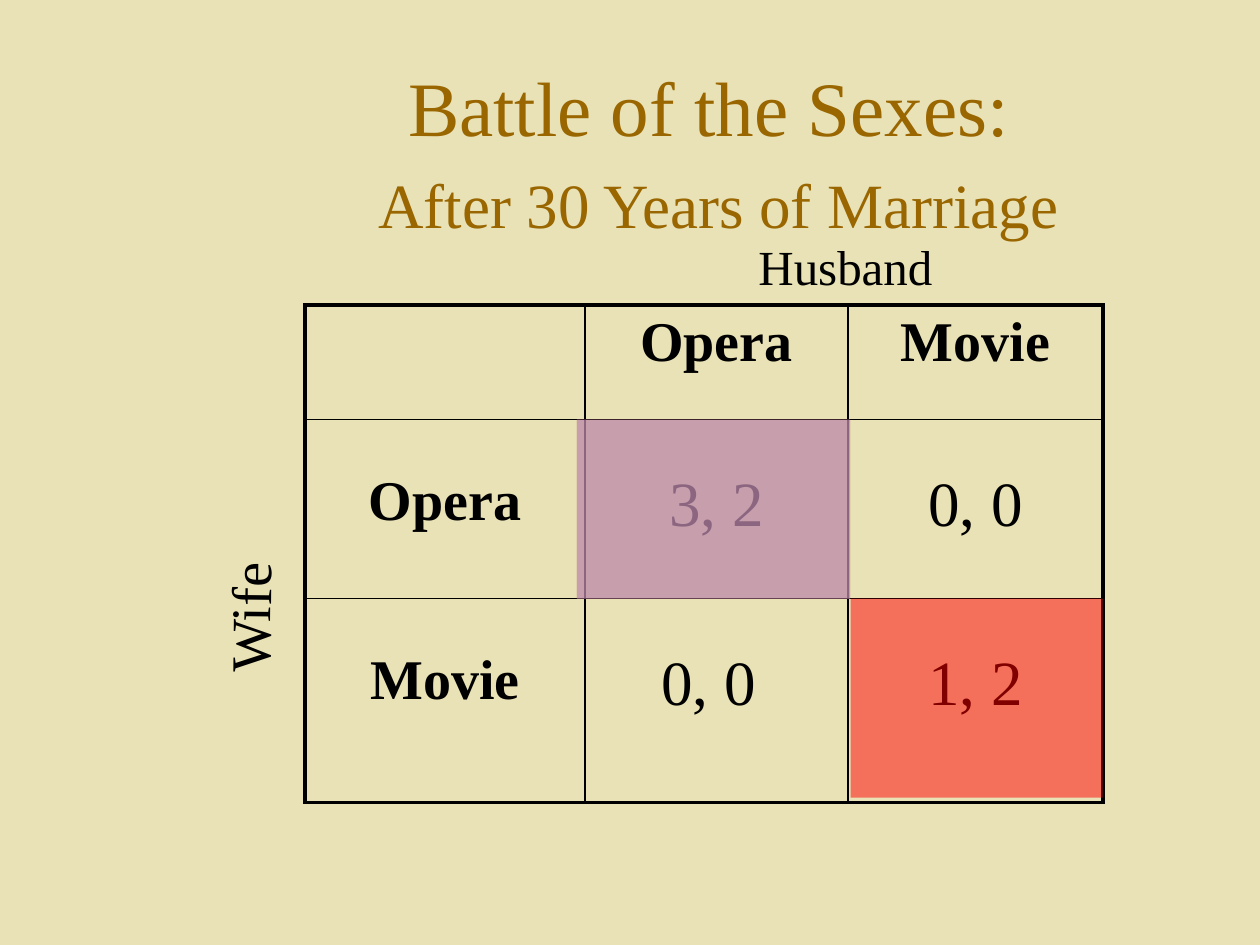
from dataclasses import dataclass

import pptx
import pptx.dml.color
import pptx.enum.shapes
import pptx.enum.text
import pptx.oxml
import pptx.oxml.ns
import pptx.util

Cm = pptx.util.Cm
Pt = pptx.util.Pt
CENTER = pptx.enum.text.PP_ALIGN.CENTER
LEFT = pptx.enum.text.PP_ALIGN.LEFT
MIDDLE = pptx.enum.text.MSO_ANCHOR.MIDDLE
TOP = pptx.enum.text.MSO_ANCHOR.TOP

FONT = "Times New Roman"
SAND, BROWN, BLACK = "E9E2B6", "996600", "000000"
RED, BLUE = "FF0000", "99CCFF"
DRAWING = pptx.oxml.ns.nsdecls("a")

HEADER = {"size": Pt(32), "bold": True}
PAYOFF = {"size": Pt(36), "bold": False}

COLUMN_WIDTHS = (5.64, 5.31, 5.14)
ROW_HEIGHTS = (2.31, 3.61, 4.11)
ROW_MARGINS = ((0.13, 0.13), (1.02, 1.02), (1.02, 0.13))
PAYOFFS = (
    ("", "Opera", "Movie"),
    ("Opera", "3, 2", "0, 0"),
    ("Movie", "0, 0 ", "1, 2"),
)


@dataclass
class Area:
    left: float
    top: float
    width: float
    height: float

    def lengths(self) -> tuple:
        return Cm(self.left), Cm(self.top), Cm(self.width), Cm(self.height)


@dataclass
class Label:
    area: Area
    lines: tuple
    color: str = BLACK
    align: int = LEFT
    anchor: int = TOP
    rotation: float = 0


@dataclass
class Highlight:
    area: Area
    color: str


OPERA_AREA = Area(11.63, 8.46, 5.51, 3.61)
MOVIE_AREA = Area(17.15, 12.07, 5.08, 4.01)

LABELS = (
    Label(Area(3.81, 1.47, 20.96, 3.18),
          (("Battle of the Sexes:", 44), (" ", 44), ("After 30 Years of Marriage", 36)),
          BROWN, CENTER, MIDDLE),
    Label(Area(15.04, 4.65, 4.7, 1.45), (("Husband", 28),)),
    Label(Area(2.36, 10.34, 5.33, 1.6), (("Wife", 32),), anchor=MIDDLE, rotation=270.6),
)
HIGHLIGHTS = (
    Highlight(OPERA_AREA, RED),
    Highlight(MOVIE_AREA, RED),
    Highlight(OPERA_AREA, BLUE),
)


def rgb(color: str) -> pptx.dml.color.RGBColor:
    return pptx.dml.color.RGBColor.from_string(color)


def apply(target, values: dict) -> None:
    for name, value in values.items():
        setattr(target, name, value)


def style_font(font, color: str, values: dict) -> None:
    apply(font, {"name": FONT, **values})
    font.color.rgb = rgb(color)


def draw_label(page, label: Label) -> None:
    box = page.shapes.add_textbox(*label.area.lengths())
    box.rotation = label.rotation
    apply(box.text_frame, {"word_wrap": True, "vertical_anchor": label.anchor})
    para = box.text_frame.paragraphs[0]
    para.alignment = label.align
    for index, (text, size) in enumerate(label.lines):
        if index == 1:
            para.add_line_break()
        span = para.add_run()
        span.text = text
        style_font(span.font, label.color, {"size": Pt(size)})


def draw_border(cell, side: str, outer: bool) -> None:
    width = Pt(2.25 if outer else 1)
    cell._tc.get_or_add_tcPr().append(pptx.oxml.parse_xml(
        f'<a:ln{side} {DRAWING} w="{width}"><a:solidFill>'
        f'<a:srgbClr val="{BLACK}"/></a:solidFill></a:ln{side}>'))


def draw_cell(cell, row: int, column: int) -> None:
    top, bottom = ROW_MARGINS[row]
    apply(cell, {"margin_left": Cm(0.25), "margin_right": Cm(0.25),
                 "margin_top": Cm(top), "margin_bottom": Cm(bottom),
                 "vertical_anchor": TOP})
    last_row, last_column = len(ROW_HEIGHTS) - 1, len(COLUMN_WIDTHS) - 1
    edges = {"L": column == 0, "R": column == last_column,
             "T": row == 0, "B": row == last_row}
    for side, outer in edges.items():
        draw_border(cell, side, outer)
    is_payoff = row > 0 and column > 0
    if is_payoff:
        cell.fill.solid()
        cell.fill.fore_color.rgb = rgb(SAND)
    else:
        cell.fill.background()
    para = cell.text_frame.paragraphs[0]
    para.alignment = CENTER
    if PAYOFFS[row][column]:
        span = para.add_run()
        span.text = PAYOFFS[row][column]
        style_font(span.font, BLACK, PAYOFF if is_payoff else HEADER)


def draw_payoff_table(page) -> None:
    area = Area(6.15, 6.15, sum(COLUMN_WIDTHS), sum(ROW_HEIGHTS))
    table = page.shapes.add_table(
        len(ROW_HEIGHTS), len(COLUMN_WIDTHS), *area.lengths()).table
    apply(table, {"first_row": False, "horz_banding": False})
    for column, width in enumerate(COLUMN_WIDTHS):
        table.columns[column].width = Cm(width)
    for row, height in enumerate(ROW_HEIGHTS):
        table.rows[row].height = Cm(height)
        for column in range(len(COLUMN_WIDTHS)):
            draw_cell(table.cell(row, column), row, column)


def draw_highlight(page, highlight: Highlight) -> None:
    shape = page.shapes.add_shape(
        pptx.enum.shapes.MSO_SHAPE.RECTANGLE, *highlight.area.lengths())
    shape.shadow.inherit = False
    shape.line.fill.background()
    shape.fill.solid()
    shape.fill.fore_color.rgb = rgb(highlight.color)
    color = shape._element.spPr.find(
        f"{pptx.oxml.ns.qn('a:solidFill')}/{pptx.oxml.ns.qn('a:srgbClr')}")
    color.append(pptx.oxml.parse_xml(f'<a:alpha {DRAWING} val="50000"/>'))


def main() -> None:
    deck = pptx.Presentation()
    apply(deck, {"slide_width": Cm(25.4), "slide_height": Cm(19.05)})
    page = deck.slides.add_slide(deck.slide_layouts[6])
    page.background.fill.solid()
    page.background.fill.fore_color.rgb = rgb(SAND)
    title, *players = LABELS
    draw_label(page, title)
    draw_payoff_table(page)
    for player in players:
        draw_label(page, player)
    for highlight in HIGHLIGHTS:
        draw_highlight(page, highlight)
    deck.save("out.pptx")


if __name__ == "__main__":
    main()
